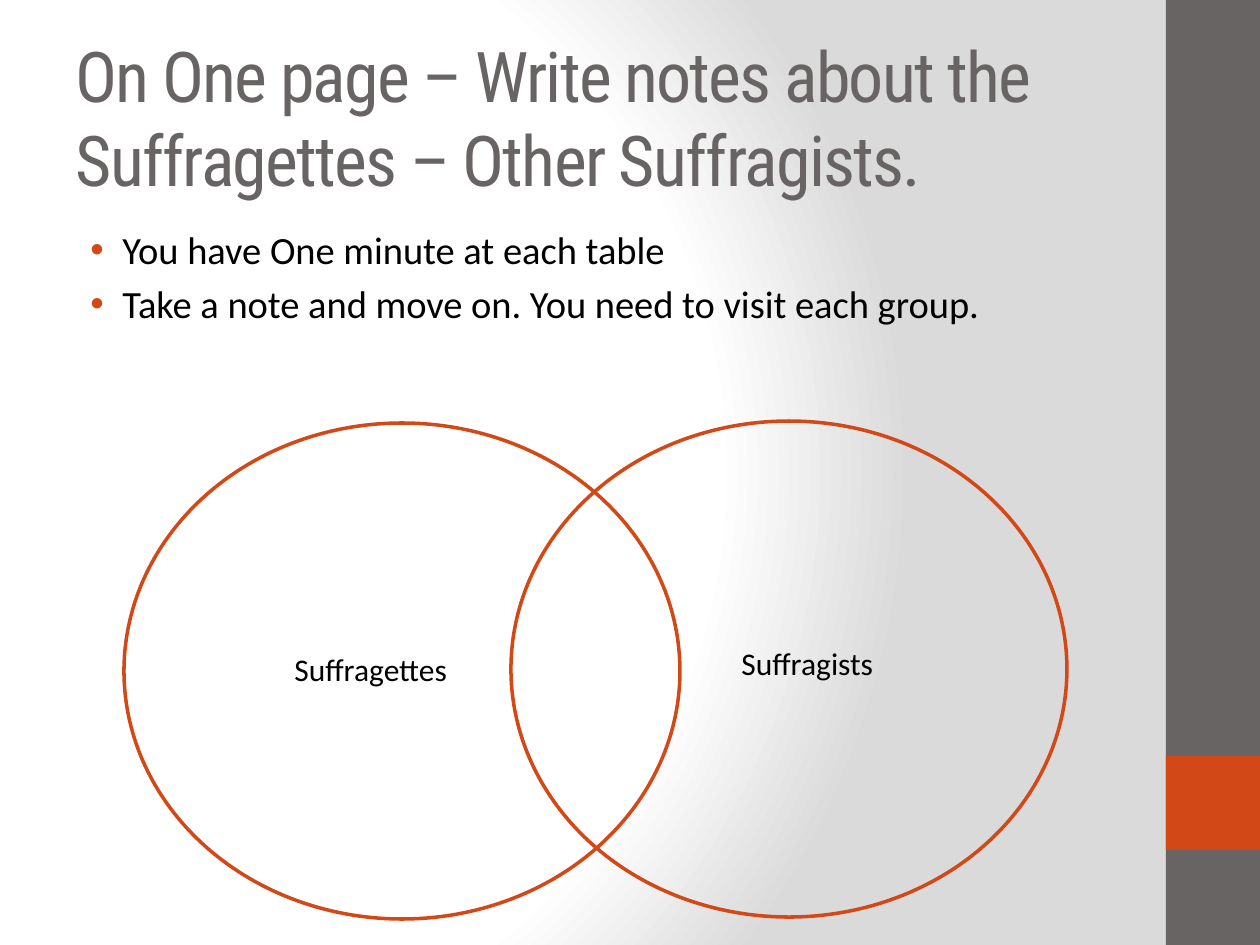
from dataclasses import dataclass

from lxml.etree import SubElement
from pptx import Presentation
from pptx.dml.color import RGBColor
from pptx.enum.shapes import MSO_SHAPE
from pptx.enum.text import MSO_ANCHOR, MSO_AUTO_SIZE, PP_ALIGN
from pptx.oxml import parse_xml
from pptx.oxml.ns import nsdecls, qn
from pptx.util import Emu, Pt

SCALE = 914400 / 126  # EMU in one px
WIDE, HIGH = 1260, 945


@dataclass(frozen=True)
class Theme:
    gray: str = "696464"
    red: str = "D34817"
    black: str = "000000"
    white: str = "FFFFFF"
    shade: str = "DADADA"
    head: str = "Roboto Condensed"
    body: str = "Calibri"
    big: int = 40
    mid: int = 22
    small: int = 18
    line: int = 2


def px(num):
    return Emu(round(num * SCALE))


def write(frame, text, font, size, color, wrap=True, anchor=MSO_ANCHOR.TOP,
          fit=MSO_AUTO_SIZE.NONE, before=0, track=0):
    """Fill a text frame, one paragraph for each line of text."""
    frame.word_wrap = wrap
    frame.auto_size = fit
    frame.vertical_anchor = anchor
    for i, line in enumerate(text.split("\n")):
        para = frame.add_paragraph() if i else frame.paragraphs[0]
        para.alignment = PP_ALIGN.LEFT
        para.space_before = Pt(before)
        run = para.add_run()
        run.text = line
        run.font.name = font
        run.font.size = Pt(size)
        run.font.color.rgb = RGBColor.from_string(color)
        if track:
            run.font._element.set("spc", str(track * 100))


class Page:
    def __init__(self, deck, theme):
        self.theme = theme
        self.slide = deck.slides.add_slide(deck.slide_layouts[5])

    def back(self):
        """Set a round gradient that spreads from the left of the slide."""
        fill = self.slide.background.fill
        fill.solid()
        look = self.theme
        stops = "".join(
            f'<a:gs pos="{pos * 1000}"><a:srgbClr val="{color}"/></a:gs>'
            for pos, color in ((0, look.white), (75, look.white), (100, look.shade)))
        grad = parse_xml(
            f'<a:gradFill {nsdecls("a")} rotWithShape="1"><a:gsLst>{stops}</a:gsLst>'
            '<a:path path="circle"><a:fillToRect l="20000" t="50000" r="100000" '
            'b="50000"/></a:path></a:gradFill>')
        bg = self.slide.background._cSld.bg.bgPr
        bg.replace(bg.find(qn("a:solidFill")), grad)

    def shape(self, kind, box, fill=None, line=None):
        item = self.slide.shapes.add_shape(kind, *map(px, box))
        item.shadow.inherit = False
        if fill:
            item.fill.solid()
            item.fill.fore_color.rgb = RGBColor.from_string(fill)
        else:
            item.fill.background()
        if line:
            item.line.color.rgb = RGBColor.from_string(line)
            item.line.width = Pt(self.theme.line)
        else:
            item.line.fill.background()

    def title(self, text, box):
        item = self.slide.shapes.title
        item.left, item.top, item.width, item.height = map(px, box)
        look = self.theme
        write(item.text_frame, text, look.head, look.big, look.gray,
              anchor=MSO_ANCHOR.MIDDLE, track=-1)

    def text(self, text, box, size, **form):
        frame = self.slide.shapes.add_textbox(*map(px, box)).text_frame
        write(frame, text, self.theme.body, size, self.theme.black, **form)
        return frame

    def list(self, text, box):
        frame = self.text(text, box, self.theme.mid, before=4.4)
        for para in frame.paragraphs:
            props = para._p.get_or_add_pPr()
            props.set("marL", str(px(47)))
            props.set("indent", str(px(-32)))
            color = SubElement(props, qn("a:buClr"))
            SubElement(color, qn("a:srgbClr"), val=self.theme.red)
            SubElement(props, qn("a:buFont"), typeface="Arial")
            SubElement(props, qn("a:buChar"), char="•")

    def label(self, text, box):
        self.text(text, box, self.theme.small, wrap=False,
                  fit=MSO_AUTO_SIZE.SHAPE_TO_FIT_TEXT)


def main():
    deck = Presentation()
    deck.slide_width, deck.slide_height = px(WIDE), px(HIGH)
    look = Theme()
    page = Page(deck, look)
    page.back()

    bar = 94
    left = WIDE - bar
    page.shape(MSO_SHAPE.RECTANGLE, (left, 0, bar, HIGH), look.gray)
    page.shape(MSO_SHAPE.RECTANGLE, (left, 756, bar, bar), look.red)

    page.title("On One page – Write notes about the Suffragettes – Other Suffragists.",
               (63, 38, 1050, 158))
    page.list("You have One minute at each table\n"
              "Take a note and move on. You need to visit each group.",
              (63, 220, 1050, 662))

    for x, y, fill in ((124, 423, look.white), (511, 421, None)):
        page.shape(MSO_SHAPE.OVAL, (x, y, 556, 496), fill, look.red)
    page.label("Suffragettes", (282, 644, 194, 50))
    page.label("Suffragists", (729, 638, 169, 50))
    deck.save("out.pptx")


if __name__ == "__main__":
    main()
